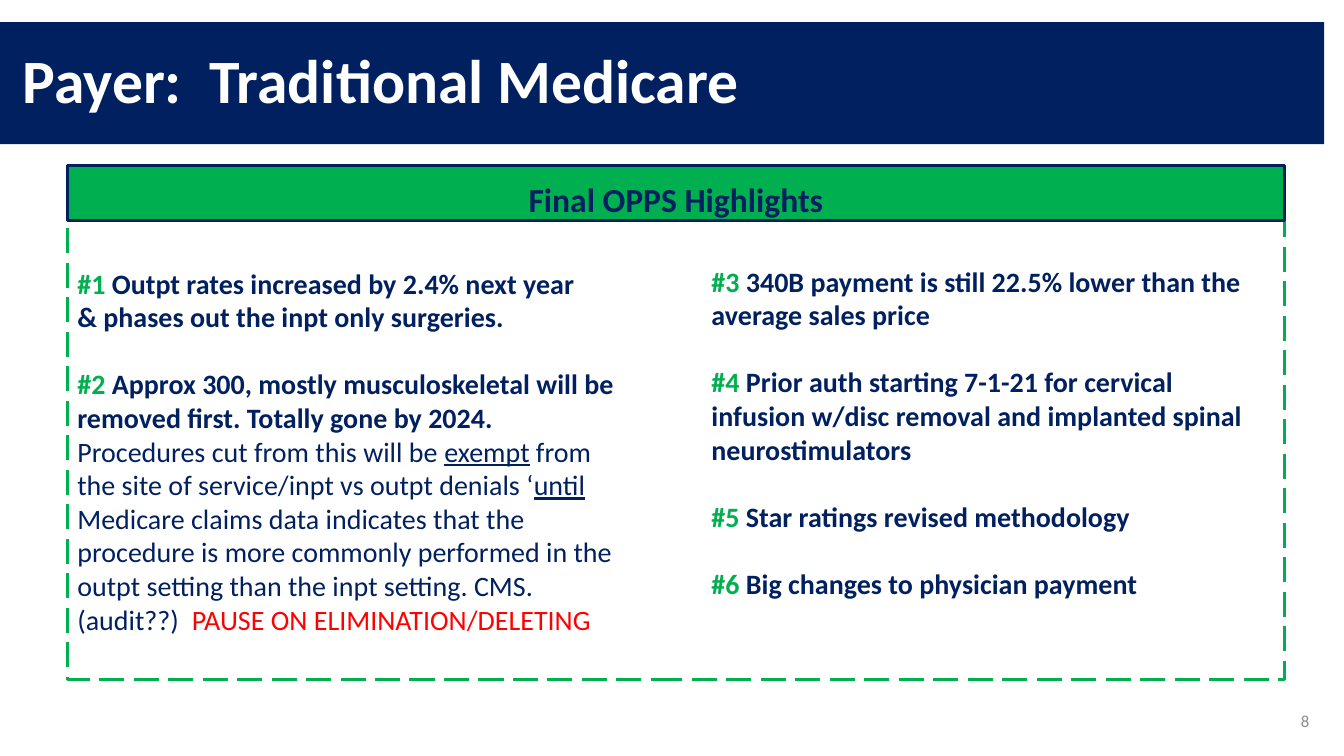
"""Build the Traditional Medicare slide with its OPPS highlights."""
from pptx import Presentation
from pptx.dml.color import RGBColor
from pptx.enum.dml import MSO_LINE
from pptx.enum.shapes import MSO_SHAPE
from pptx.enum.text import MSO_ANCHOR, MSO_AUTO_SIZE, PP_ALIGN
from pptx.util import Cm, Pt

COLORS = {"navy": "002060", "green": "00B050", "red": "FF0000",
          "white": "FFFFFF", "gray": "8C8C8C"}
FONT = "Calibri"
TITLE = "Payer:  Traditional Medicare"
HEAD = "Final OPPS Highlights"
PAGE = "8"
STYLES = {
    "tag": {"color": "green", "bold": True},
    "bold": {"color": "navy", "bold": True},
    "text": {"color": "navy"},
    "under": {"color": "navy", "under": True},
    "alert": {"color": "red"},
}
LEFT = [
    [("tag", "#1 "), ("bold", "Outpt rates increased by 2.4% next year")],
    [("bold", "& phases out the inpt only surgeries.")],
    [("tag", "#2 "), ("bold", "Approx 300, mostly musculoskeletal will be "
                      "removed first. Totally gone by 2024.")],
    [("text", "Procedures cut from this will be "), ("under", "exempt"),
     ("text", " from the site of service/inpt vs outpt denials ‘"),
     ("under", "until"),
     ("text", " Medicare claims data indicates that the procedure is more "
      "commonly performed in the outpt setting than the inpt setting. CMS.  "
      "(audit??)  "),
     ("alert", "PAUSE ON ELIMINATION/DELETING")],
]
RIGHT = [
    [("tag", "#3 "), ("bold", "340B payment is still 22.5% lower than the "
                      "average sales price")],
    [("tag", "#4 "), ("bold", "Prior auth starting 7-1-21 for cervical infusion "
                      "w/disc removal and implanted spinal neurostimulators")],
    [("tag", "#5 "), ("bold", "Star ratings revised methodology")],
    [("tag", "#6 "), ("bold", "Big changes to physician payment")],
]
EDGE, WIDE = 1.7, 30.67
TOP, SPLIT, BASE = 4.17, 5.56, 17.12
COLS = [(EDGE, 6.58, 11.53, LEFT), (17.68, 6.53, 10.62, RIGHT)]


def rgb(name):
    return RGBColor.from_string(COLORS[name])


def add_run(para, text, size, color, bold=False, under=False):
    run = para.add_run()
    run.text = text
    font = run.font
    font.name, font.size, font.bold = FONT, Pt(size), bold
    font.underline = under
    font.color.rgb = rgb(color)


def add_text(slide, x, y, w, h):
    frame = slide.shapes.add_textbox(Cm(x), Cm(y), Cm(w), Cm(h)).text_frame
    frame.word_wrap = True
    return frame


def add_rect(slide, y, h, line):
    rect = slide.shapes.add_shape(
        MSO_SHAPE.RECTANGLE, Cm(EDGE), Cm(y), Cm(WIDE), Cm(h))
    rect.shadow.inherit = False
    rect.line.color.rgb = rgb(line)
    rect.line.width = Pt(2.25)
    return rect


def add_title(slide):
    title = slide.shapes.title
    title.left, title.top = Cm(-0.03), Cm(0.56)
    title.width, title.height = Cm(33.4), Cm(3.07)
    title.fill.solid()
    title.fill.fore_color.rgb = rgb("navy")
    frame = title.text_frame
    frame.auto_size = MSO_AUTO_SIZE.NONE
    frame.vertical_anchor = MSO_ANCHOR.MIDDLE
    frame.margin_left = Cm(0.6)
    para = frame.paragraphs[0]
    para.alignment = PP_ALIGN.LEFT
    para.line_spacing = 0.9
    add_run(para, TITLE, 44, "white", True)


def add_column(slide, x, y, h, items):
    frame = add_text(slide, x, y, 14.17, h)
    for i, item in enumerate(items):
        para = frame.add_paragraph() if i else frame.paragraphs[0]
        if i and item[0][0] == "tag":
            para.space_before = Pt(24)
        for style, text in item:
            add_run(para, text, 20, **STYLES[style])


def add_panel(slide):
    box = add_rect(slide, SPLIT, BASE - SPLIT, "green")
    box.fill.background()
    box.line.dash_style = MSO_LINE.LONG_DASH
    head = add_rect(slide, TOP, SPLIT - TOP, "navy")
    head.fill.solid()
    head.fill.fore_color.rgb = rgb("green")
    frame = head.text_frame
    frame.vertical_anchor = MSO_ANCHOR.TOP
    para = frame.paragraphs[0]
    para.alignment = PP_ALIGN.CENTER
    para.line_spacing = 1.2
    add_run(para, HEAD, 24, "navy", True)


def add_page(slide):
    frame = add_text(slide, 25.63, 17.65, 7.62, 1.02)
    frame.vertical_anchor = MSO_ANCHOR.MIDDLE
    para = frame.paragraphs[0]
    para.alignment = PP_ALIGN.RIGHT
    add_run(para, PAGE, 12, "gray")


def main():
    deck = Presentation()
    deck.slide_width, deck.slide_height = Cm(33.87), Cm(19.05)
    slide = deck.slides.add_slide(deck.slide_layouts[5])
    add_title(slide)
    for col in COLS:
        add_column(slide, *col)
    add_page(slide)
    add_panel(slide)
    deck.save("out.pptx")


if __name__ == "__main__":
    main()
